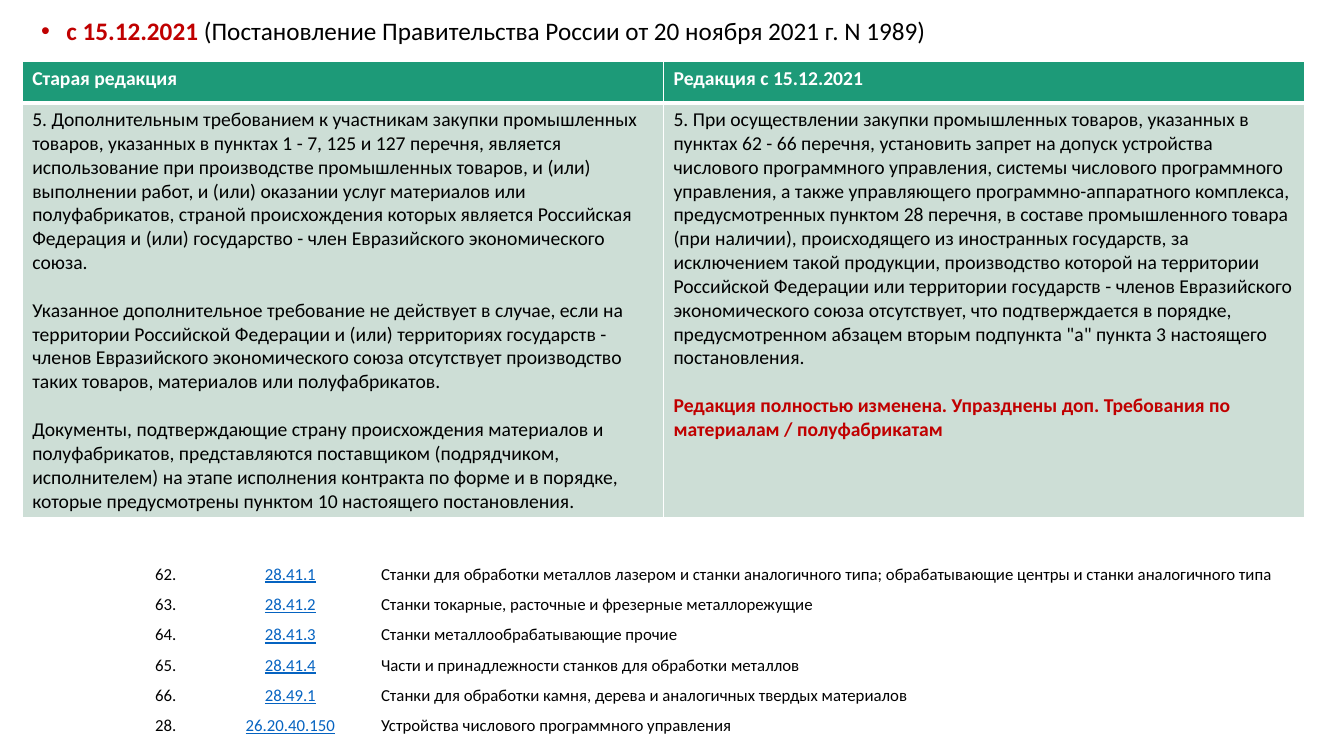
"""Build the slide comparing the old and the new wording of the decree."""
from dataclasses import dataclass

from lxml.etree import SubElement
from pptx import Presentation
from pptx.dml.color import RGBColor
from pptx.enum.text import PP_ALIGN
from pptx.oxml.ns import qn
from pptx.util import Emu, Pt


@dataclass(frozen=True)
class Theme:
    """Colours, font and type sizes."""
    font: str = "Calibri"
    black: str = "000000"
    white: str = "FFFFFF"
    red: str = "C00000"
    green: str = "1D9A78"
    pale_green: str = "CDDED6"
    code_blue: str = "0563C1"
    title_size: int = 18
    wording_size: int = 14
    list_size: int = 12
    paragraph_gap: int = 17


THEME = Theme()

OLD_WORDING = [
    "5. Дополнительным требованием к участникам закупки промышленных товаров, указанных в "
    "пунктах 1 - 7, 125 и 127 перечня, является использование при производстве промышленных "
    "товаров, и (или) выполнении работ, и (или) оказании услуг материалов или полуфабрикатов, "
    "страной происхождения которых является Российская Федерация и (или) государство - член "
    "Евразийского экономического союза.",
    "Указанное дополнительное требование не действует в случае, если на территории Российской "
    "Федерации и (или) территориях государств - членов Евразийского экономического союза "
    "отсутствует производство таких товаров, материалов или полуфабрикатов.",
    "Документы, подтверждающие страну происхождения материалов и полуфабрикатов, "
    "представляются поставщиком (подрядчиком, исполнителем) на этапе исполнения контракта по "
    "форме и в порядке, которые предусмотрены пунктом 10 настоящего постановления.",
]
NEW_WORDING = [
    "5. При осуществлении закупки промышленных товаров, указанных в пунктах 62 - 66 перечня, "
    "установить запрет на допуск устройства числового программного управления, системы "
    "числового программного управления, а также управляющего программно-аппаратного "
    "комплекса, предусмотренных пунктом 28 перечня, в составе промышленного товара (при "
    "наличии), происходящего из иностранных государств, за исключением такой продукции, "
    "производство которой на территории Российской Федерации или территории государств - "
    "членов Евразийского экономического союза отсутствует, что подтверждается в порядке, "
    "предусмотренном абзацем вторым подпункта \"а\" пункта 3 настоящего постановления.",
    "Редакция полностью изменена. Упразднены доп. Требования по материалам / полуфабрикатам",
]
GOODS = [
    ("62.", "28.41.1", "Станки для обработки металлов лазером и станки аналогичного типа; "
                       "обрабатывающие центры и станки аналогичного типа"),
    ("63.", "28.41.2", "Станки токарные, расточные и фрезерные металлорежущие"),
    ("64.", "28.41.3", "Станки металлообрабатывающие прочие"),
    ("65.", "28.41.4", "Части и принадлежности станков для обработки металлов"),
    ("66.", "28.49.1", "Станки для обработки камня, дерева и аналогичных твердых материалов"),
    ("28.", "26.20.40.150", "Устройства числового программного управления"),
]


def px(length):
    """Turn whole pixels, 100 to the inch, into EMU."""
    return Emu(length * 9144)


def style(font, size=None, color=None, bold=None, underline=None):
    """Set the given properties of a font."""
    font.name = THEME.font
    if size:
        font.size = Pt(size)
    if color:
        font.color.rgb = RGBColor.from_string(color)
    font.bold = bold
    font.underline = underline


def add_heading(slide, date, decree):
    """Add the bulleted heading with its date in red."""
    frame = slide.shapes.add_textbox(px(31), px(14), px(1150), px(476)).text_frame
    frame.word_wrap = True
    heading = frame.paragraphs[0]
    heading.line_spacing = 0.9
    properties = heading._p.get_or_add_pPr()
    properties.set("marL", str(px(25)))
    properties.set("indent", str(-px(25)))
    bullet_color = SubElement(properties, qn("a:buClr"))
    SubElement(bullet_color, qn("a:srgbClr"), val=THEME.red)
    SubElement(properties, qn("a:buFont"), typeface="Arial")
    SubElement(properties, qn("a:buChar"), char="•")
    style(heading.font, THEME.title_size)
    for text, color, bold in ((date, THEME.red, True), (decree, THEME.black, False)):
        run = heading.add_run()
        run.text = text
        style(run.font, THEME.title_size, color, bold)


def add_grid(slide, left, top, widths, heights):
    """Add a table without banding and return it."""
    table = slide.shapes.add_table(len(heights), len(widths), px(left), px(top),
                                   px(sum(widths)), px(sum(heights))).table
    table.first_row = table.horz_banding = False
    for column, width in zip(table.columns, widths):
        column.width = px(width)
    for row, height in zip(table.rows, heights):
        row.height = px(height)
    return table


def set_borders(cell, left=1, right=1, top=1, bottom=1):
    """Draw white borders of the given widths in points."""
    properties = cell._tc.get_or_add_tcPr()
    for side, width in zip("LRTB", (left, right, top, bottom)):
        line = SubElement(properties, qn(f"a:ln{side}"), w=str(Pt(width)))
        fill = SubElement(line, qn("a:solidFill"))
        SubElement(fill, qn("a:srgbClr"), val=THEME.white)


def fill_cell(cell, fill, texts, size, color, bold=False, underline=False,
              align=PP_ALIGN.LEFT):
    """Colour a cell and write its paragraphs."""
    cell.fill.solid()
    cell.fill.fore_color.rgb = RGBColor.from_string(fill)
    cell.text_frame.text = "\n".join(texts)
    for index, paragraph in enumerate(cell.text_frame.paragraphs):
        paragraph.alignment = align
        if index:
            paragraph.space_before = Pt(THEME.paragraph_gap)
        style(paragraph.font, size, color, bold, underline)


def add_comparison(slide):
    """Add the table of the old and the new wording."""
    table = add_grid(slide, 22, 61, (636, 636), (41, 412))
    columns = (("Старая редакция", OLD_WORDING), ("Редакция с 15.12.2021", NEW_WORDING))
    for index, (header, wording) in enumerate(columns):
        header_cell, wording_cell = table.cell(0, index), table.cell(1, index)
        set_borders(header_cell, bottom=3)
        set_borders(wording_cell, top=3)
        fill_cell(header_cell, THEME.green, [header], THEME.wording_size, THEME.white, True)
        fill_cell(wording_cell, THEME.pale_green, wording, THEME.wording_size, THEME.black)
    conclusion = table.cell(1, 1).text_frame.paragraphs[-1]
    style(conclusion.font, THEME.wording_size, THEME.red, True)


def add_goods(slide):
    """Add the list of goods with their classification codes."""
    table = add_grid(slide, 121, 555, (87, 160, 918), [30] * len(GOODS))
    looks = (
        {"color": THEME.black, "align": PP_ALIGN.CENTER},
        {"color": THEME.code_blue, "align": PP_ALIGN.CENTER, "underline": True},
        {"color": THEME.black},
    )
    for row, goods in zip(table.rows, GOODS):
        for cell, text, look in zip(row.cells, goods, looks):
            fill_cell(cell, THEME.white, [text], THEME.list_size, **look)


def main():
    """Build and save the slide."""
    deck = Presentation()
    deck.slide_width, deck.slide_height = px(1333), px(750)
    slide = deck.slides.add_slide(deck.slide_layouts[6])
    add_heading(slide, "с 15.12.2021 ",
                "(Постановление Правительства России от 20 ноября 2021 г. N 1989)")
    add_comparison(slide)
    add_goods(slide)
    deck.save("out.pptx")


if __name__ == "__main__":
    main()
